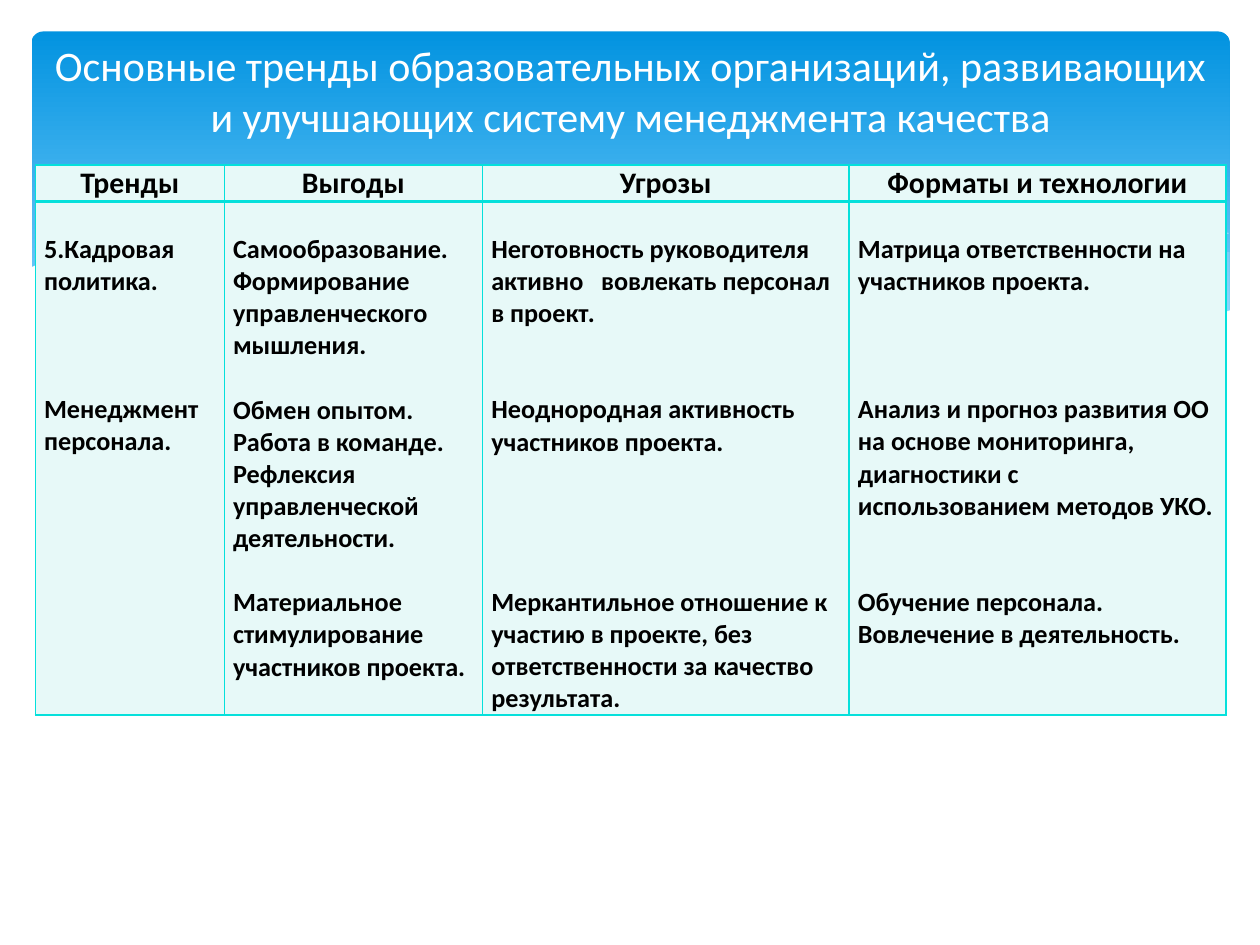
import pptx
import pptx.dml.color
import pptx.enum.shapes
import pptx.enum.text
import pptx.oxml.ns
import pptx.util
from lxml import etree

In, Pt = pptx.util.Inches, pptx.util.Pt
RGB = pptx.dml.color.RGBColor.from_string
qn = pptx.oxml.ns.qn
ALIGN = pptx.enum.text.PP_ALIGN
MIDDLE = pptx.enum.text.MSO_ANCHOR.MIDDLE
FONT = "Calibri"
COLORS = {
    "top": "0293E0", "bottom": "83D3FE", "wave": "C6E7FC", "white": "FFFFFF",
    "cell": "E7F9F8", "border": "05E0DB", "text": "000000",
}
BODY_LINE = 18.3  # height of one line of 15 pt text, in points


def add_run(p, text, size, color, bold=False):
    r = p.add_run()
    r.text = text
    r.font.name, r.font.size, r.font.bold = FONT, Pt(size), bold
    r.font.color.rgb = RGB(COLORS[color])


def set_border(cell, side, width):
    ln = etree.SubElement(cell._tc.get_or_add_tcPr(), qn(f"a:ln{side}"), w=str(Pt(width)))
    fill = etree.SubElement(ln, qn("a:solidFill"))
    etree.SubElement(fill, qn("a:srgbClr"), val=COLORS["border"])


prs = pptx.Presentation()
prs.slide_width, prs.slide_height = In(10), In(7.5)
s = prs.slides.add_slide(prs.slide_layouts[5])

# Gradient banner
sp = s.shapes.add_shape(pptx.enum.shapes.MSO_SHAPE.ROUNDED_RECTANGLE,
                        In(0.25), In(0.25), In(9.51), In(2.7))
sp.adjustments[0] = 0.034
sp.shadow.inherit = False
sp.line.fill.background()
sp.fill.gradient()
sp.fill.gradient_angle = 270
for stop, color, position in zip(sp.fill.gradient_stops, ("top", "bottom"), (0, 0.9)):
    stop.color.rgb = RGB(COLORS[color])
    stop.position = position

# Waves: fill, opacity in percent, points in hundredths of an inch
waves = [
    ("wave", 29, [(975, 200), (935, 207), (891, 216), (832, 230), (779, 242), (729, 253),
                  (661, 265), (705, 271), (757, 276), (803, 278), (854, 276), (897, 270),
                  (935, 262), (963, 252), (976, 247), (976, 200)]),
    ("wave", 40, [(893, 273), (837, 265), (775, 254), (706, 240), (629, 222), (569, 208),
                  (514, 198), (465, 191), (420, 187), (361, 185), (313, 188), (286, 191),
                  (342, 199), (404, 211), (491, 232), (566, 248), (634, 261), (695, 270),
                  (748, 276), (796, 278), (848, 277)]),
    (None, 100, [(309, 195), (344, 190), (401, 187), (450, 188), (510, 192), (582, 200),
                 (636, 208), (695, 219), (760, 233), (831, 251), (907, 272)]),
    (None, 100, [(613, 257), (672, 241), (748, 223), (806, 210), (866, 199), (924, 190),
                 (975, 185)]),
    ("white", 100, [(977, 246), (950, 256), (920, 265), (887, 271), (850, 275), (809, 277),
                    (761, 275), (708, 270), (648, 262), (579, 250), (503, 233), (447, 220),
                    (391, 207), (340, 197), (292, 190), (250, 186), (193, 184), (146, 185),
                    (106, 189), (76, 195), (52, 201), (36, 207), (23, 213), (23, 329),
                    (977, 329)]),
]
for color, opacity, points in waves:
    builder = s.shapes.build_freeform(*points[0], scale=In(0.01))
    builder.add_line_segments(points[1:], close=color is not None)
    sp = builder.convert_to_shape()
    sp.shadow.inherit = False
    if color:
        sp.fill.solid()
        sp.fill.fore_color.rgb = RGB(COLORS[color])
        sp.line.fill.background()
        if opacity < 100:
            clr = sp.fill._xPr.find(qn("a:solidFill"))[0]
            etree.SubElement(clr, qn("a:alpha"), val=str(opacity * 1000))
    else:
        sp.fill.background()
        sp.line.color.rgb = RGB(COLORS["white"])
        sp.line.width = Pt(0.25)

# Each column: width, heading, paragraphs with the free lines above them
columns = [
    (1.5, "Тренды", [(0, "5.Кадровая политика."), (3, "Менеджмент персонала.")]),
    (2.05, "Выгоды", [
        (0, "Самообразование."),
        (0, "Формирование управленческого мышления."),
        (1, "Обмен опытом."),
        (0, "Работа в команде."),
        (0, "Рефлексия управленческой деятельности."),
        (1, "Материальное стимулирование участников проекта.")]),
    (2.91, "Угрозы", [
        (0, "Неготовность руководителя активно   вовлекать персонал в проект."),
        (2, "Неоднородная активность участников проекта."),
        (4, "Меркантильное отношение к участию в проекте, без ответственности "
            "за качество результата.")]),
    (2.99, "Форматы и технологии", [
        (0, "Матрица ответственности на участников проекта."),
        (3, "Анализ и прогноз развития ОО на основе мониторинга, диагностики "
            "с использованием методов УКО."),
        (2, "Обучение персонала. Вовлечение в деятельность.")]),
]
frame = s.shapes.add_table(2, len(columns), In(0.28), In(1.31), In(9.45), In(3.97))
table = frame.table
table.first_row = table.horz_banding = False
table.rows[0].height, table.rows[1].height = In(0.28), In(3.69)
for col, (width, heading, paragraphs) in enumerate(columns):
    table.columns[col].width = In(width)
    for row, content in enumerate(([(0, heading)], paragraphs)):
        cell = table.cell(row, col)
        cell.margin_left = cell.margin_right = In(0.07)
        cell.margin_top = Pt(BODY_LINE * row)
        cell.margin_bottom = 0
        for side in "LRTB":
            middle = (row, side) in ((0, "B"), (1, "T"))
            set_border(cell, side, 2 if middle else 1)
        cell.fill.solid()
        cell.fill.fore_color.rgb = RGB(COLORS["cell"])
        tf = cell.text_frame
        for i, (gap, text) in enumerate(content):
            p = tf.add_paragraph() if i else tf.paragraphs[0]
            p.alignment = ALIGN.LEFT if row else ALIGN.CENTER
            p.space_before = Pt(round(gap * BODY_LINE, 1))
            add_run(p, text, 15 if row else 17, "text", bold=True)

# Title, in front of the banner
title = s.shapes.title
s.shapes._spTree.append(title._element)
title.left, title.top, title.width, title.height = In(0.28), In(0.21), In(9.45), In(1.01)
tf = title.text_frame
tf.word_wrap = True
tf.auto_size = pptx.enum.text.MSO_AUTO_SIZE.NONE
tf.vertical_anchor = MIDDLE
p = tf.paragraphs[0]
p.alignment = ALIGN.CENTER
add_run(p, "Основные тренды образовательных организаций, развивающих и улучшающих "
           "систему менеджмента качества", 24, "white")

prs.save("out.pptx")
